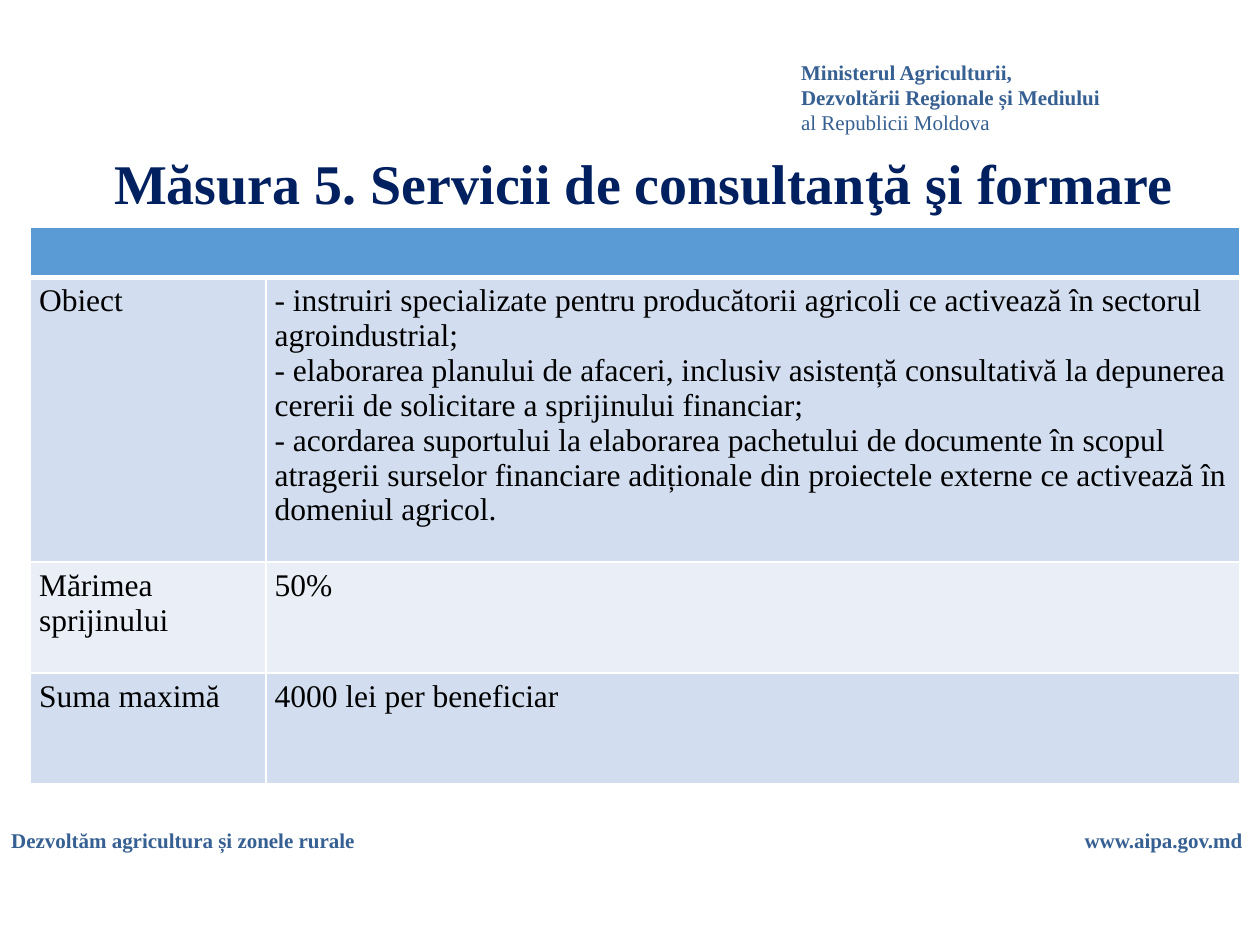
from lxml import etree
from pptx import Presentation
from pptx.dml.color import RGBColor
from pptx.enum import text
from pptx.oxml import ns
from pptx.util import Inches, Pt

FONT = "Times New Roman"
COLORS = {
    "brand": "376092",
    "title": "002060",
    "header": "5B9BD5",
    "band_dark": "D2DEEF",
    "band_light": "EAEFF7",
    "border": "FFFFFF",
    "body": "000000",
}
ROWS = [
    (["Obiect"], [
        "- instruiri specializate pentru producătorii agricoli ce activează în sectorul agroindustrial;",
        "- elaborarea planului de afaceri, inclusiv asistență consultativă la depunerea cererii de "
        "solicitare a sprijinului financiar;",
        "- acordarea suportului la elaborarea pachetului de documente în scopul atragerii surselor "
        "financiare adiționale din proiectele externe ce activează în domeniul agricol.",
    ]),
    (["Mărimea sprijinului"], ["50%"]),
    (["Suma maximă"], ["4000 lei per beneficiar"]),
]


def color(name):
    return RGBColor.from_string(COLORS[name])


def write(tf, lines, size, color_name, bold=False):
    for i, line in enumerate(lines):
        p = tf.paragraphs[0] if i == 0 else tf.add_paragraph()
        p.text = line
        p.font.name = FONT
        p.font.size = Pt(size)
        p.font.bold = bold
        p.font.color.rgb = color(color_name)


def add_text(s, box, lines, size, color_name, wrap=True):
    """Add a bold text box and return its text frame."""
    tf = s.shapes.add_textbox(*map(Inches, box)).text_frame
    tf.word_wrap = wrap
    write(tf, lines, size, color_name, bold=True)
    return tf


def add_ministry(s, box):
    tf = add_text(s, box, ["Ministerul Agriculturii, Dezvoltării Regionale și Mediului",
                           "al Republicii Moldova"], 12, "brand")
    tf.paragraphs[1].font.bold = False


def add_title(s, box):
    tf = add_text(s, box, ["Măsura 5. Servicii de consultanţă şi formare"], 32, "title")
    tf.vertical_anchor = text.MSO_ANCHOR.MIDDLE
    p = tf.paragraphs[0]
    p.alignment = text.PP_ALIGN.CENTER
    p.line_spacing = 0.9


def add_footer(s, left, top, width, height):
    add_text(s, (left, top, 6.02, height), ["Dezvoltăm agricultura și zonele rurale"], 12, "brand")
    link_width = 1.47
    tf = add_text(s, (left + width - link_width, top, link_width, height),
                  ["www.aipa.gov.md"], 12, "brand", wrap=False)
    tf.paragraphs[0].alignment = text.PP_ALIGN.CENTER


def style_cell(cell, fill, top=1, bottom=1):
    """Draw the borders, widths in points, then the fill."""
    tc_pr = cell._tc.get_or_add_tcPr()
    for side, width in (("L", 1), ("R", 1), ("T", top), ("B", bottom)):
        ln = etree.SubElement(tc_pr, ns.qn(f"a:ln{side}"), w=str(Pt(width)))
        solid = etree.SubElement(ln, ns.qn("a:solidFill"))
        etree.SubElement(solid, ns.qn("a:srgbClr"), val=COLORS["border"])
    cell.fill.solid()
    cell.fill.fore_color.rgb = color(fill)


def add_measure_table(s, box):
    table = s.shapes.add_table(len(ROWS) + 1, 2, *map(Inches, box)).table
    for column, width in zip(table.columns, (1.87, 7.73)):
        column.width = Inches(width)
    for row, height in zip(table.rows, (0.32, 2.26, 0.88, 0.88)):
        row.height = Inches(height)

    table.cell(0, 0).merge(table.cell(0, 1))
    for col in range(2):
        style_cell(table.cell(0, col), "header", bottom=3)

    for r, contents in enumerate(ROWS, start=1):
        for c, lines in enumerate(contents):
            cell = table.cell(r, c)
            style_cell(cell, "band_dark" if r % 2 else "band_light", top=3 if r == 1 else 1)
            cell.margin_left = cell.margin_right = Inches(0.07)
            cell.margin_top = cell.margin_bottom = Inches(0.05)
            write(cell.text_frame, lines, 18, "body")


def main():
    prs = Presentation()
    prs.slide_width, prs.slide_height = Inches(10), Inches(7.5)
    s = prs.slides.add_slide(prs.slide_layouts[6])
    add_footer(s, -0.01, 6.52, 9.98, 0.3)
    add_ministry(s, (6.26, 0.42, 2.69, 0.71))
    add_title(s, (0.36, 1.17, 9.5, 0.62))
    add_measure_table(s, (0.24, 1.8, 9.6, 4.35))
    prs.save("out.pptx")


if __name__ == "__main__":
    main()
